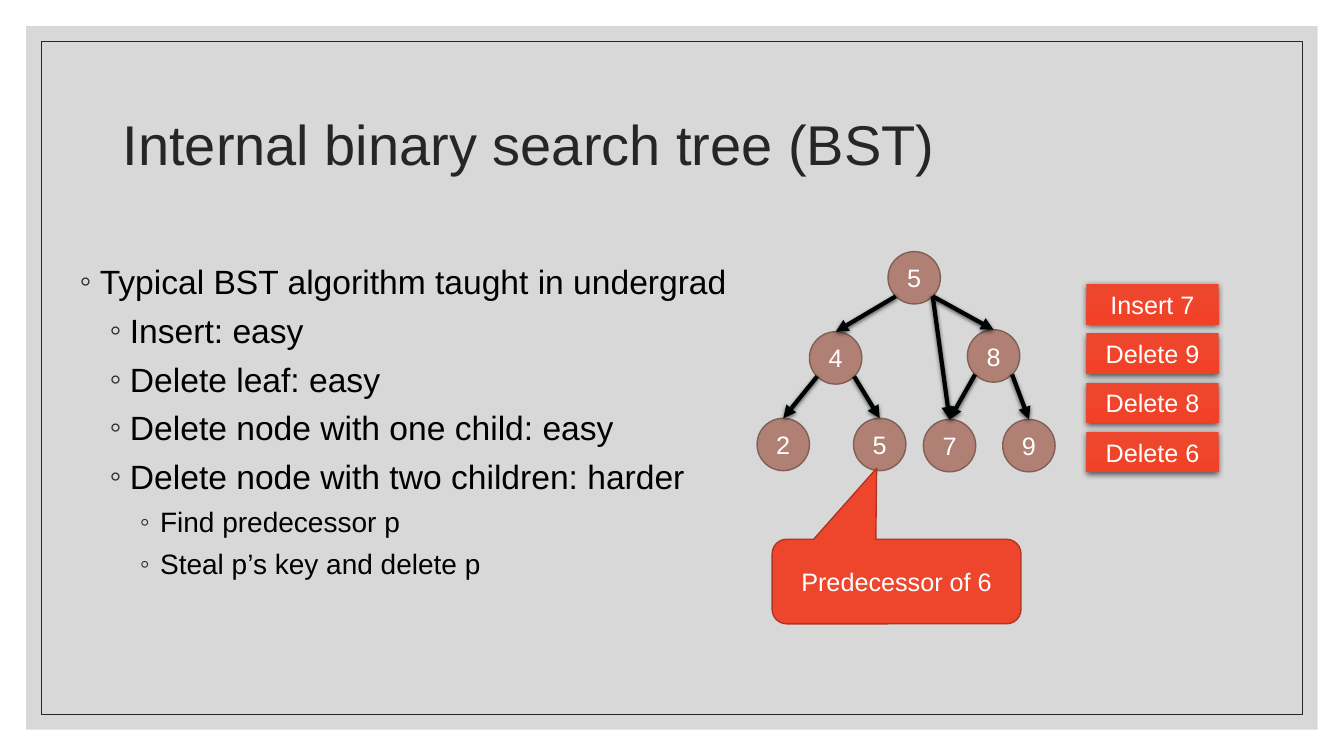
from math import sqrt

from lxml.etree import SubElement
from pptx import Presentation
from pptx.dml.color import RGBColor
from pptx.enum.shapes import MSO_CONNECTOR as Link, MSO_SHAPE as Kind
from pptx.enum.text import MSO_ANCHOR as Anchor, MSO_AUTO_SIZE as Auto, PP_ALIGN as Align
from pptx.oxml.ns import qn
from pptx.util import Cm, Pt

TITLE = "Internal binary search tree (BST)"
POINTS = [
    (0, "Typical BST algorithm taught in undergrad"),
    (1, "Insert: easy"),
    (1, "Delete leaf: easy"),
    (1, "Delete node with one child: easy"),
    (1, "Delete node with two children: harder"),
    (2, "Find predecessor p"),
    (2, "Steal p’s key and delete p"),
]
# name: key, left, top in cm
NODES = {
    "root": ("5", 22.38, 6.34),
    "left": ("4", 20.4, 8.36),
    "right": ("8", 24.38, 8.31),
    "two": ("2", 19.08, 10.54),
    "five": ("5", 21.51, 10.54),
    "seven": ("7", 23.27, 10.57),
    "nine": ("9", 25.27, 10.57),
}
# parent, child, side of the parent where the arrow leaves
EDGES = [
    ("root", "left", -1), ("root", "right", 1),
    ("left", "two", -1), ("left", "five", 1),
    ("right", "seven", -1), ("right", "nine", 1),
    ("root", "seven", 1),
]
STEPS = ["Insert 7", "Delete 9", "Delete 8", "Delete 6"]
NOTE = "Predecessor of 6"

COLORS = {
    "panel": "BFBFBF", "dark": "262626", "text": "000000", "white": "FFFFFF",
    "node": "AF8073", "rim": "815F55", "arrow": "000304",
    "red": "EE462D", "deep": "F14228", "edge": "B03421",
}
FONT = "Arial"
WIDE, HIGH = 33.87, 19.05
SIZE = 1.32
STEP_TOP, STEP_GAP = 7.16, 1.24


def rgb(name):
    return RGBColor.from_string(COLORS[name])


def style(par, size, color):
    for run in par.runs:
        run.font.name = FONT
        run.font.size = Pt(size)
        run.font.color.rgb = rgb(color)


def place(shape, left, top, width, height):
    shape.left, shape.top = Cm(left), Cm(top)
    shape.width, shape.height = Cm(width), Cm(height)


def add_box(slide, kind, box, fill=None, line=None, width=1, text=""):
    shape = slide.shapes.add_shape(kind, *map(Cm, box))
    shape.shadow.inherit = False
    if fill:
        shape.fill.solid()
        shape.fill.fore_color.rgb = rgb(fill)
    else:
        shape.fill.background()
    if line:
        shape.line.color.rgb = rgb(line)
        shape.line.width = Pt(width)
    else:
        shape.line.fill.background()
    if text:
        frame = shape.text_frame
        frame.text = text
        frame.word_wrap = False
        frame.vertical_anchor = Anchor.MIDDLE
        frame.paragraphs[0].alignment = Align.CENTER
        style(frame.paragraphs[0], 18, "white")
    return shape


def add_shadow(shape, blur, dist):
    props = shape._element.spPr
    old = props.find(qn("a:effectLst"))
    if old is not None:
        props.remove(old)
    fx = SubElement(props, qn("a:effectLst"))
    outer = SubElement(fx, qn("a:outerShdw"), blurRad=str(Pt(blur)),
                       dist=str(Pt(dist)), dir="5400000", rotWithShape="0")
    color = SubElement(outer, qn("a:srgbClr"), val=COLORS["text"])
    SubElement(color, qn("a:alpha"), val="63000")


def add_panels(slide):
    """Place the grey panel and its thin frame behind the placeholders."""
    tree = slide.shapes._spTree
    for spot, (gap, fill, line) in enumerate([(0.66, "panel", None), (1.04, None, "dark")]):
        box = (gap, gap, WIDE - 2 * gap, HIGH - 2 * gap)
        panel = add_box(slide, Kind.RECTANGLE, box, fill, line, 0.5)
        for color in panel._element.spPr.findall(qn("a:solidFill") + "/" + qn("a:srgbClr")):
            SubElement(color, qn("a:alpha"), val="60000")
        tree.insert(2 + spot, panel._element)


def add_title(slide):
    title = slide.shapes.title
    place(title, 2.84, 1.63, 27, 4.17)
    frame = title.text_frame
    frame.text = TITLE
    frame.auto_size = Auto.NONE
    frame.vertical_anchor = Anchor.MIDDLE
    par = frame.paragraphs[0]
    par.alignment = Align.LEFT
    par.line_spacing = 0.9
    style(par, 40, "dark")


def add_points(slide):
    body = slide.placeholders[1]
    place(body, 1.75, 6.35, 17.7, 11.18)
    frame = body.text_frame
    frame.text = "\n".join(text for _, text in POINTS)
    frame.auto_size = Auto.NONE
    for par, (level, _) in zip(frame.paragraphs, POINTS):
        par.level = level
        par.line_spacing = 1.1 if level == 0 else 1.0
        par.space_before = Pt(9 if level == 0 else 6)
        style(par, 20 if level == 2 else 24, "text")
        props = par._p.get_or_add_pPr()
        props.set("marL", str(Cm(0.51 + 0.76 * level)))
        props.set("indent", str(-Cm(0.51)))
        color = SubElement(props, qn("a:buClr"))
        SubElement(color, qn("a:srgbClr"), val=COLORS["dark"])
        SubElement(props, qn("a:buFont"), typeface=FONT)
        SubElement(props, qn("a:buChar"), char="◦")


def add_arrow(slide, parent, child, side):
    """Run from the parent's lower left or right to the child's top."""
    half = SIZE / 2
    slant = half / sqrt(2)
    _, left, top = NODES[parent]
    _, end, low = NODES[child]
    ends = (left + half + side * slant, top + half + slant, end + half, low)
    arrow = slide.shapes.add_connector(Link.STRAIGHT, *map(Cm, ends))
    arrow.line.color.rgb = rgb("arrow")
    arrow.line.width = Pt(3)
    SubElement(arrow.line._get_or_add_ln(), qn("a:tailEnd"), type="triangle")
    add_shadow(arrow, 3, 1)


def add_steps(slide):
    for row, text in enumerate(STEPS):
        box = (27.38, STEP_TOP + row * STEP_GAP, 3.33, 1.02)
        step = add_box(slide, Kind.RECTANGLE, box, "red", text=text)
        step.fill.gradient()
        step.fill.gradient_angle = 270
        for stop, color in zip(step.fill.gradient_stops, ("red", "deep")):
            stop.color.rgb = rgb(color)
        add_shadow(step, 4.5, 1.5)


def main():
    deck = Presentation()
    deck.slide_width, deck.slide_height = Cm(WIDE), Cm(HIGH)
    slide = deck.slides.add_slide(deck.slide_layouts[1])
    add_panels(slide)
    add_title(slide)
    add_points(slide)
    for key, left, top in NODES.values():
        add_box(slide, Kind.OVAL, (left, top, SIZE, SIZE), "node", "rim", text=key)
    for edge in EDGES:
        add_arrow(slide, *edge)
    add_steps(slide)
    note = add_box(slide, Kind.ROUNDED_RECTANGULAR_CALLOUT, (19.46, 13.59, 6.27, 2.13),
                   "red", "edge", text=NOTE)
    for spot, value in enumerate((-0.08, -1.34, 0.17)):
        note.adjustments[spot] = value
    deck.save("out.pptx")


if __name__ == "__main__":
    main()
